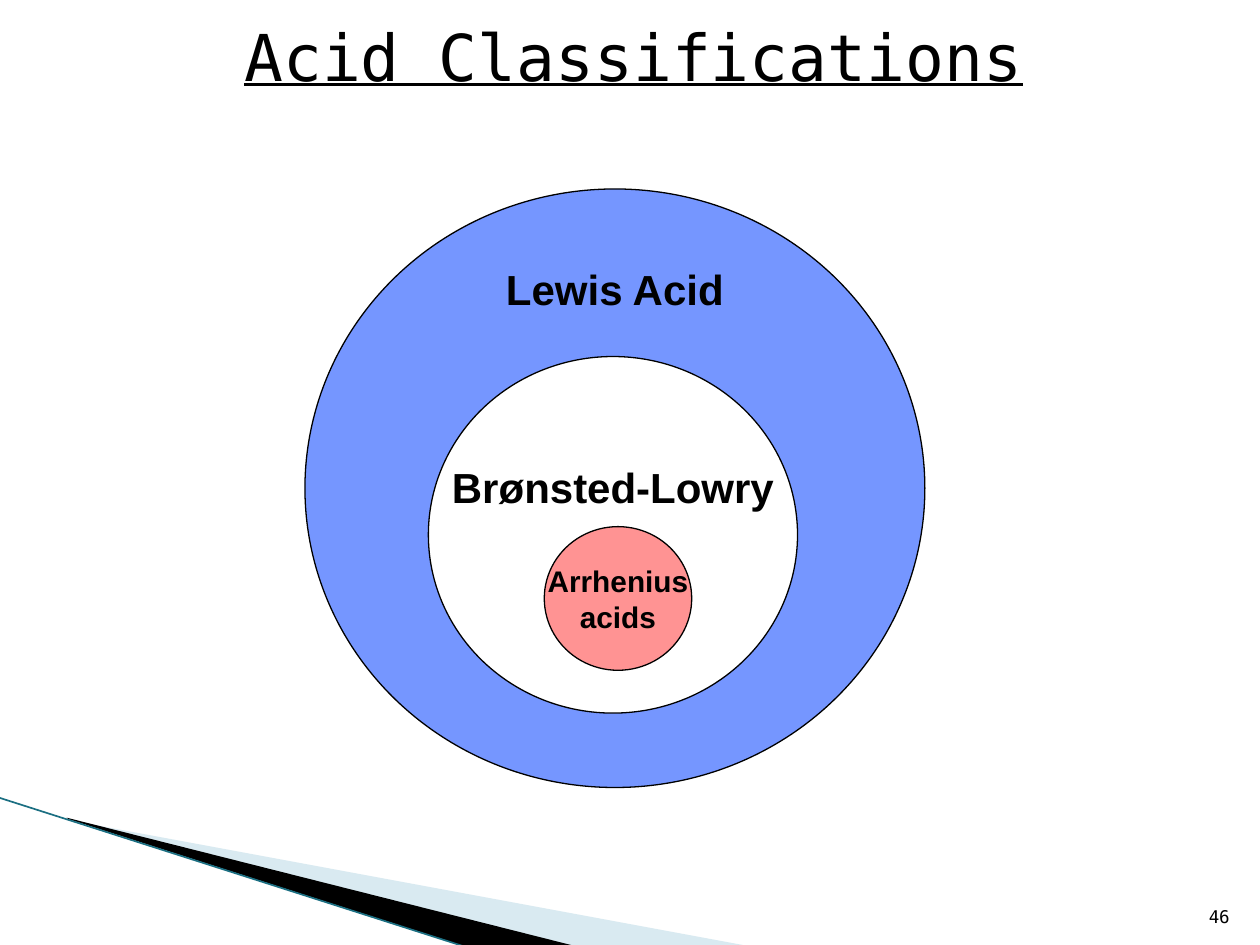
import pptx
import pptx.util
import pptx.dml.color
import pptx.enum.shapes
import pptx.enum.text
import pptx.oxml.ns
import lxml.etree

Inches = pptx.util.Inches
Pt = pptx.util.Pt
Color = pptx.dml.color.RGBColor.from_string
Align = pptx.enum.text.PP_ALIGN
Anchor = pptx.enum.text.MSO_ANCHOR
qn = pptx.oxml.ns.qn

theme = {
    "ink": "000000", "pale": "A0CBDC", "teal": "1B6F82",
    "lewis": "7596FF", "lowry": "FFFFFF", "core": "FF9393",
    "mono": "DejaVu Sans Mono", "sans": "Arial",
    "title": 36.9, "label": 24, "small": 17, "page": 10,
}


def write(shape, lines, face, size, align, frame, **style):
    text = shape.text_frame
    base = {"margin_left": 0, "margin_right": 0, "margin_top": 0, "margin_bottom": 0}
    for key, value in {**base, **frame}.items():
        setattr(text, key, value)
    text.text = "\n".join(lines)
    for para in text.paragraphs:
        para.alignment = align
        font = para.runs[0].font
        font.color.rgb = Color(theme["ink"])
        for key, value in {"name": theme[face], "size": Pt(theme[size]), **style}.items():
            setattr(font, key, value)


deck = pptx.Presentation()
deck.slide_width, deck.slide_height = Inches(10), Inches(7.5)
slide = deck.slides.add_slide(deck.slide_layouts[6])
shapes = slide.shapes

wedges = [
    ("pale", 40, [(0.55, 6.51), (5.95, 7.51), (4.56, 7.51), (0.55, 6.5)]),
    ("ink", 100, [(0.53, 6.49), (4.57, 7.51), (3.72, 7.52), (0.54, 6.5)]),
]
for tint, alpha, spots in wedges:
    points = [(Inches(x), Inches(y)) for x, y in spots]
    pen = shapes.build_freeform(*points[0])
    pen.add_line_segments(points[1:], close=True)
    wedge = pen.convert_to_shape()
    wedge.shadow.inherit = False
    wedge.fill.solid()
    wedge.fill.fore_color.rgb = Color(theme[tint])
    wedge.line.fill.background()
    if alpha < 100:
        color = wedge.fill._xPr.find(".//" + qn("a:srgbClr"))
        lxml.etree.SubElement(color, qn("a:alpha"), val=str(alpha * 1000))

edge = shapes.add_connector(
    pptx.enum.shapes.MSO_CONNECTOR.STRAIGHT,
    Inches(-0.01), Inches(6.33), Inches(3.71), Inches(7.52))
edge.line.color.rgb = Color(theme["teal"])
edge.line.width = Pt(0.95)
lxml.etree.SubElement(edge._element.spPr, qn("a:effectLst"))

page = shapes.add_textbox(*map(Inches, (9.36, 7.01, 0.4, 0.4)))
write(page, ["46"], "mono", "page", Align.RIGHT,
      {"word_wrap": True, "vertical_anchor": Anchor.BOTTOM, "margin_bottom": Inches(0.05)})
title = shapes.add_textbox(*map(Inches, (0.53, 0.08, 9, 0.72)))
write(title, ["Acid Classifications"], "mono", "title", Align.CENTER,
      {"word_wrap": True, "vertical_anchor": Anchor.MIDDLE}, underline=True)

rings = [
    ("lewis", (2.42, 1.5, 4.92, 4.75), ["Lewis Acid"], "label", 3.17),
    ("lowry", (3.4, 2.83, 2.93, 2.83), ["Brønsted-Lowry"], "label", 0.76),
    ("core", (4.32, 4.18, 1.17, 1.14), ["Arrhenius", "acids"], "small", 0),
]
group = shapes.add_group_shape()
for tint, box, lines, size, lift in rings:
    ring = group.shapes.add_shape(pptx.enum.shapes.MSO_SHAPE.OVAL, *map(Inches, box))
    ring.shadow.inherit = False
    ring.fill.solid()
    ring.fill.fore_color.rgb = Color(theme[tint])
    ring.line.color.rgb = Color(theme["ink"])
    ring.line.width = Pt(0.75)
    write(ring, lines, "sans", size, Align.CENTER,
          {"word_wrap": False, "vertical_anchor": Anchor.MIDDLE,
           "margin_bottom": Inches(lift)}, bold=True)

deck.save("out.pptx")
